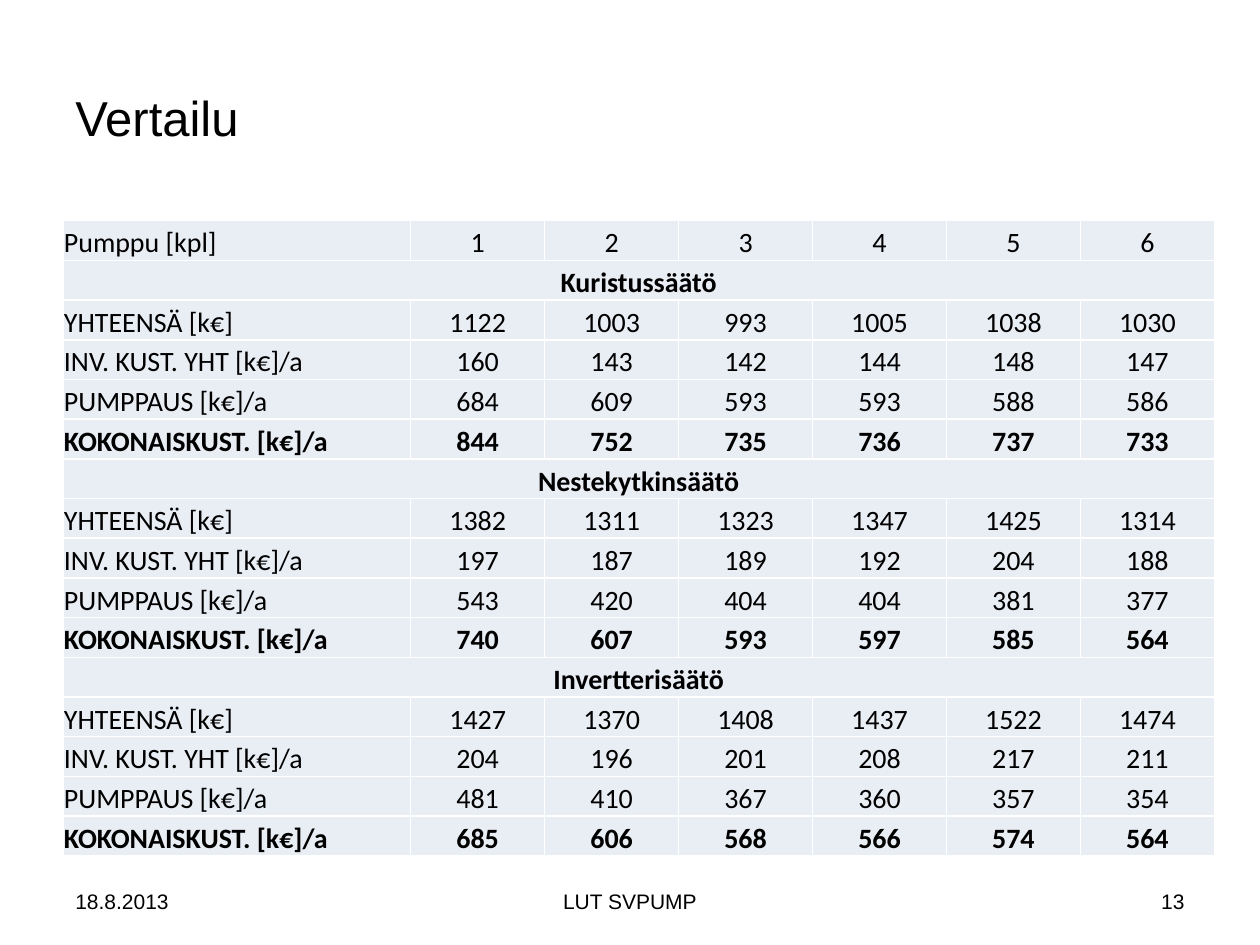
import pptx
import pptx.dml.color
import pptx.enum.text
import pptx.oxml.ns
import pptx.util
from lxml import etree

Cm = pptx.util.Cm
ALIGN = pptx.enum.text.PP_ALIGN
ANCHOR = pptx.enum.text.MSO_ANCHOR


def colour(code):
    return pptx.dml.color.RGBColor.from_string(code)


def write(frame, text, font="Arial", size=12, bold=False, align=ALIGN.LEFT, ink="000000"):
    para = frame.paragraphs[0]
    para.alignment = align
    span = para.add_run()
    span.text = text
    span.font.name = font
    span.font.size = pptx.util.Pt(size)
    span.font.bold = bold
    span.font.color.rgb = colour(ink)


class SlideBuilder:
    cell_fill = "E9EDF4"
    border = "FFFFFF"
    table_font = "Calibri"
    table_size = 16

    def __init__(self, page):
        self.page = page

    def text(self, text, left, top, width, height, **style):
        box = self.page.shapes.add_textbox(Cm(left), Cm(top), Cm(width), Cm(height))
        frame = box.text_frame
        frame.word_wrap = True
        frame.vertical_anchor = ANCHOR.MIDDLE
        write(frame, text, **style)

    def outline(self, cell):
        properties = cell._tc.get_or_add_tcPr()
        for position, side in enumerate(("lnL", "lnR", "lnT", "lnB")):
            line = etree.Element(pptx.oxml.ns.qn("a:" + side), w=str(pptx.util.Pt(1)))
            fill = etree.SubElement(line, pptx.oxml.ns.qn("a:solidFill"))
            etree.SubElement(fill, pptx.oxml.ns.qn("a:srgbClr"), val=self.border)
            properties.insert(position, line)

    def cell(self, cell, text, **style):
        cell.fill.solid()
        cell.fill.fore_color.rgb = colour(self.cell_fill)
        self.outline(cell)
        cell.margin_left = cell.margin_right = cell.margin_top = Cm(0.02)
        cell.margin_bottom = 0
        cell.vertical_anchor = ANCHOR.BOTTOM
        if text:
            write(cell.text_frame, text, font=self.table_font, size=self.table_size, **style)

    def table(self, rows, left, top, widths, row_height):
        """Each row is (cells, bold); a row with one cell spans the whole width."""
        frame = self.page.shapes.add_table(
            len(rows), len(widths), Cm(left), Cm(top),
            Cm(sum(widths)), Cm(row_height * len(rows)))
        grid = frame.table
        grid.first_row = grid.horz_banding = False
        for column, width in zip(grid.columns, widths):
            column.width = Cm(width)
        for index, (values, bold) in enumerate(rows):
            grid.rows[index].height = Cm(row_height)
            heading = len(values) == 1
            if heading:
                grid.cell(index, 0).merge(grid.cell(index, len(widths) - 1))
            for place in range(len(widths)):
                text = str(values[place]) if place < len(values) else ""
                centred = heading or place > 0
                self.cell(grid.cell(index, place), text, bold=bold,
                          align=ALIGN.CENTER if centred else ALIGN.LEFT)


COST_LABELS = ("YHTEENSÄ [k€]", "INV. KUST. YHT [k€]/a",
               "PUMPPAUS [k€]/a", "KOKONAISKUST. [k€]/a")
COSTS = {
    "Kuristussäätö": [
        (1122, 1003, 993, 1005, 1038, 1030),
        (160, 143, 142, 144, 148, 147),
        (684, 609, 593, 593, 588, 586),
        (844, 752, 735, 736, 737, 733)],
    "Nestekytkinsäätö": [
        (1382, 1311, 1323, 1347, 1425, 1314),
        (197, 187, 189, 192, 204, 188),
        (543, 420, 404, 404, 381, 377),
        (740, 607, 593, 597, 585, 564)],
    "Invertterisäätö": [
        (1427, 1370, 1408, 1437, 1522, 1474),
        (204, 196, 201, 208, 217, 211),
        (481, 410, 367, 360, 357, 354),
        (685, 606, 568, 566, 574, 564)],
}


def cost_rows():
    rows = [(("Pumppu [kpl]", *range(1, 7)), False)]
    for method, figures in COSTS.items():
        rows.append(((method,), True))
        for label, values in zip(COST_LABELS, figures):
            rows.append(((label, *values), label == COST_LABELS[-1]))
    return rows


def main():
    deck = pptx.Presentation()
    deck.slide_width, deck.slide_height = Cm(25.4), Cm(19.05)
    builder = SlideBuilder(deck.slides.add_slide(deck.slide_layouts[6]))

    # Title
    builder.text("Vertailu", 1.27, 0.76, 22.86, 3.18, size=28)

    # Footer
    builder.text("18.8.2013", 1.27, 17.66, 5.93, 1.01)
    builder.text("LUT SVPUMP", 8.68, 17.66, 8.04, 1.01, align=ALIGN.CENTER)
    builder.text("13", 18.2, 17.66, 5.93, 1.01, align=ALIGN.RIGHT)

    # Cost comparison
    builder.table(cost_rows(), 1.27, 4.45, [7.01] + [2.7] * 6, 0.8)

    deck.save("out.pptx")


if __name__ == "__main__":
    main()
